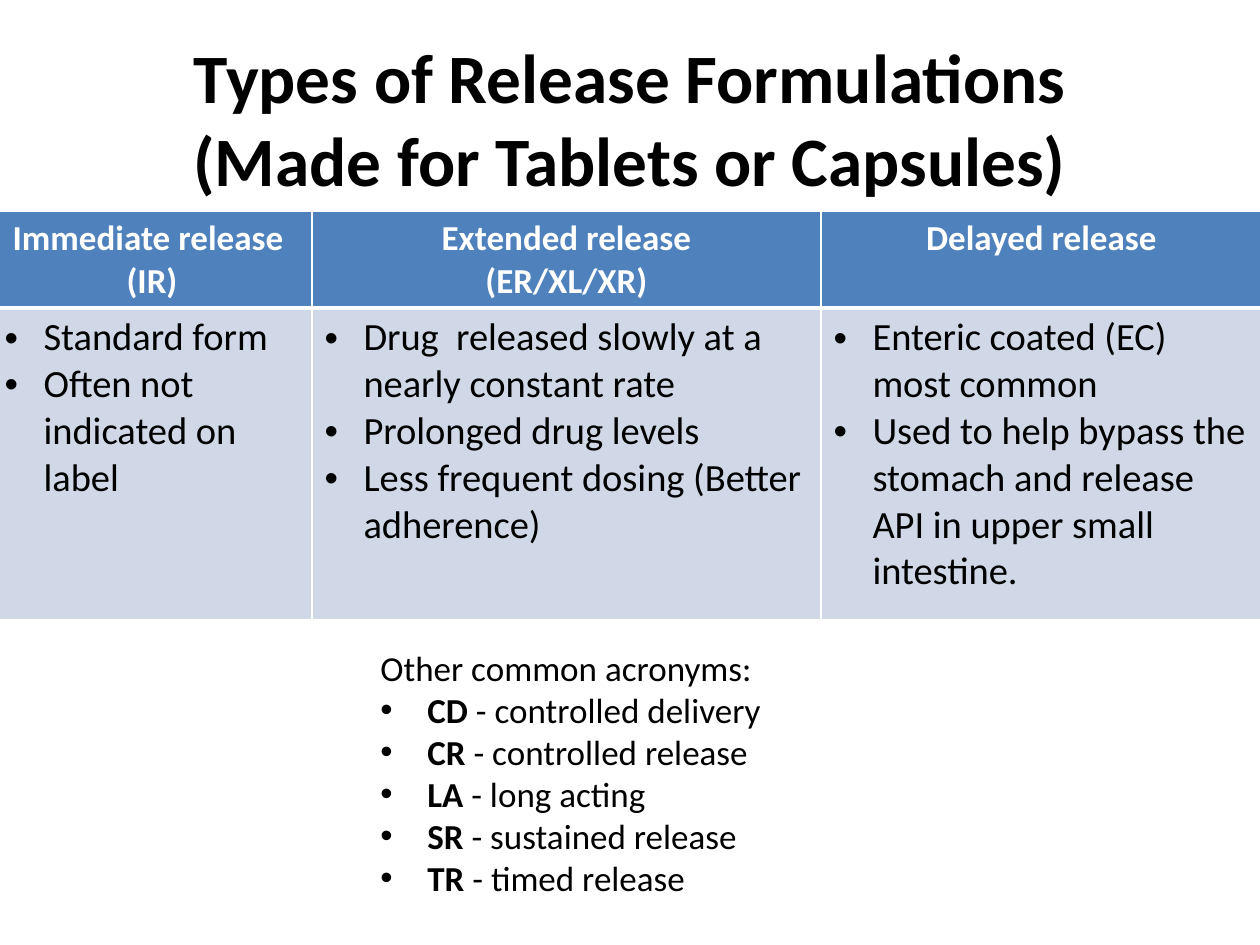
from lxml.etree import SubElement
from pptx import Presentation
from pptx.dml.color import RGBColor
from pptx.enum.text import MSO_ANCHOR, PP_ALIGN
from pptx.oxml.ns import qn
from pptx.util import Inches, Pt

PX = 914400 // 126  # EMU per pixel
BLACK, WHITE, BLUE, PALE_BLUE = "000000", "FFFFFF", "4F81BD", "D0D8E8"


def format_runs(paragraph, size, color, bold=False):
    for run in paragraph.runs:
        run.font.name = "Calibri"
        run.font.size = Pt(size)
        run.font.bold = bold
        run.font.color.rgb = RGBColor.from_string(color)


def add_bullet(paragraph, indent):
    properties = paragraph._p.get_or_add_pPr()
    properties.set("marL", str(indent * PX))
    properties.set("indent", str(-indent * PX))
    SubElement(properties, qn("a:buFont"), typeface="Arial")
    SubElement(properties, qn("a:buChar"), char="•")


presentation = Presentation()
presentation.slide_width, presentation.slide_height = Inches(10), Inches(7.5)
slide = presentation.slides.add_slide(presentation.slide_layouts[6])

# Title
title = slide.shapes.add_textbox(63 * PX, 38 * PX, 1134 * PX, 158 * PX)
title.text_frame.word_wrap = True
title.text_frame.vertical_anchor = MSO_ANCHOR.MIDDLE
paragraph = title.text_frame.paragraphs[0]
paragraph.text = "Types of Release Formulations\v(Made for Tablets or Capsules)"
paragraph.alignment = PP_ALIGN.CENTER
format_runs(paragraph, 39.6, BLACK, bold=True)

# Table of release types: width, heading, points
columns = [
    (320, "Immediate release \v(IR)",
     ["Standard form", "Often not indicated on label"]),
    (509, "Extended release\v(ER/XL/XR)",
     ["Drug  released slowly at a nearly constant rate",
      "Prolonged drug levels",
      "Less frequent dosing (Better adherence)"]),
    (441, "Delayed release",
     ["Enteric coated (EC) most common",
      "Used to help bypass the stomach and release API in upper small intestine."]),
]
table = slide.shapes.add_table(2, 3, -8 * PX, 211 * PX, 1270 * PX, 409 * PX).table
table.rows[0].height = 97 * PX
table.rows[1].height = 312 * PX

for column, (width, heading, points) in enumerate(columns):
    table.columns[column].width = width * PX
    header, body = table.cell(0, column), table.cell(1, column)

    # White borders, thicker between the two rows
    for cell, fill, top, bottom in ((header, BLUE, 1, 3), (body, PALE_BLUE, 3, 1)):
        cell_properties = cell._tc.get_or_add_tcPr()
        for side, weight in (("L", 1), ("R", 1), ("T", top), ("B", bottom)):
            line = SubElement(cell_properties, qn(f"a:ln{side}"), w=str(Pt(weight)))
            line_fill = SubElement(line, qn("a:solidFill"))
            SubElement(line_fill, qn("a:srgbClr"), val=WHITE)
        cell.fill.solid()
        cell.fill.fore_color.rgb = RGBColor.from_string(fill)

    paragraph = header.text_frame.paragraphs[0]
    paragraph.text = heading
    paragraph.alignment = PP_ALIGN.CENTER
    format_runs(paragraph, 20, WHITE, bold=True)

    body.text_frame.text = "\n".join(points)
    for paragraph in body.text_frame.paragraphs:
        add_bullet(paragraph, 39)
        format_runs(paragraph, 22, BLACK)

# Acronym list
acronyms = {
    "CD": "controlled delivery",
    "CR": "controlled release",
    "LA": "long acting",
    "SR": "sustained release",
    "TR": "timed release",
}
acronym_box = slide.shapes.add_textbox(368 * PX, 640 * PX, 410 * PX, 267 * PX)
text_frame = acronym_box.text_frame
text_frame.word_wrap = True
text_frame.text = "Other common acronyms:"
format_runs(text_frame.paragraphs[0], 20, BLACK)
for acronym, meaning in acronyms.items():
    paragraph = text_frame.add_paragraph()
    paragraph.text = f"{acronym} "
    paragraph.add_run().text = f"- {meaning}"
    add_bullet(paragraph, 47)
    format_runs(paragraph, 20, BLACK)
    paragraph.runs[0].font.bold = True

presentation.save("out.pptx")
